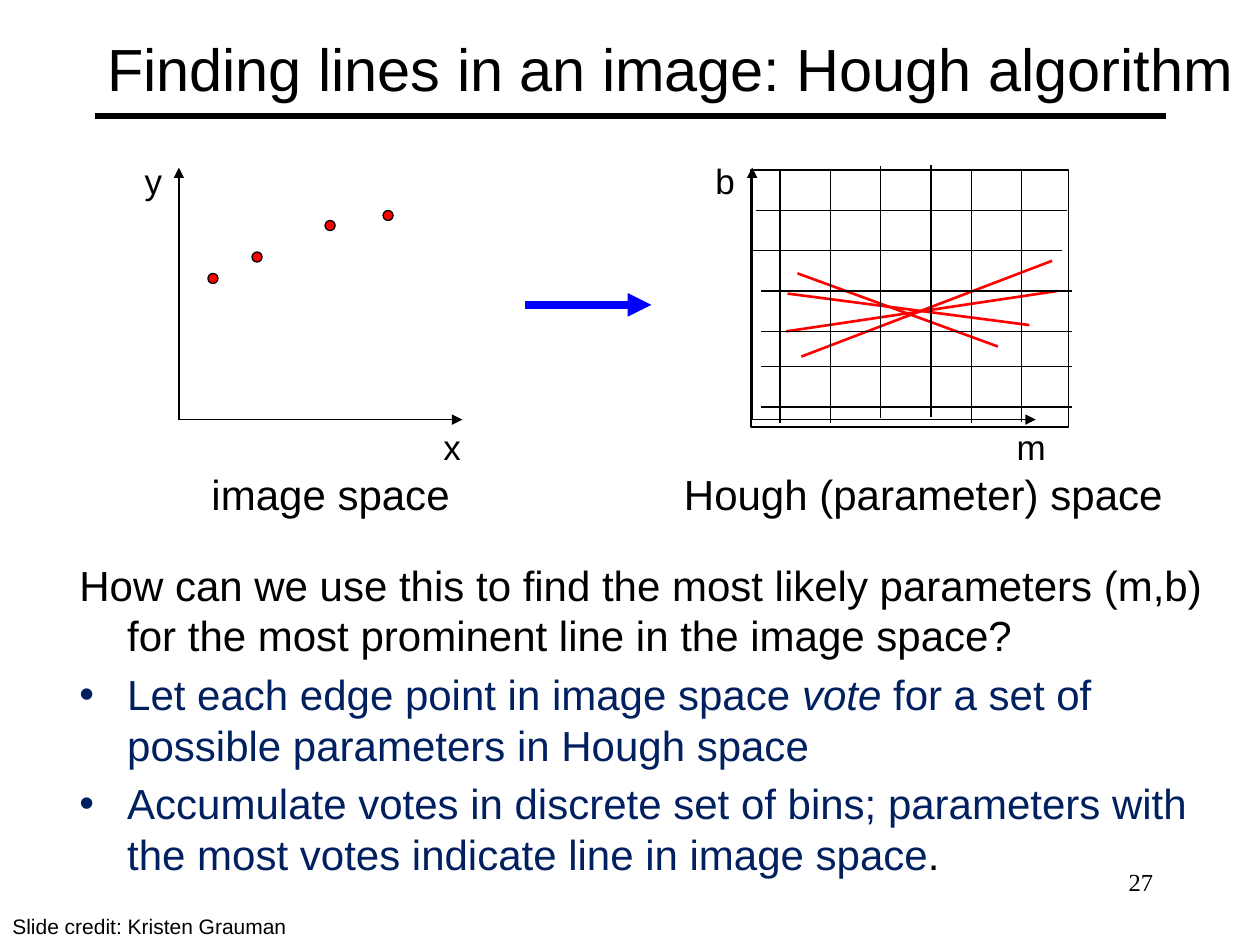
from lxml import etree
from pptx import Presentation
from pptx.dml.color import RGBColor
from pptx.enum.shapes import MSO_CONNECTOR, MSO_SHAPE
from pptx.enum.text import MSO_ANCHOR, MSO_AUTO_SIZE, PP_ALIGN
from pptx.oxml.ns import qn
from pptx.util import Inches, Pt

BLACK = RGBColor(0x00, 0x00, 0x00)
RED = RGBColor(0xFF, 0x00, 0x00)
BLUE = RGBColor(0x00, 0x00, 0xFF)
NAVY = RGBColor(0x00, 0x20, 0x60)
STRAIGHT = MSO_CONNECTOR.STRAIGHT
OVAL, RECTANGLE = MSO_SHAPE.OVAL, MSO_SHAPE.RECTANGLE
LEFT, RIGHT = PP_ALIGN.LEFT, PP_ALIGN.RIGHT

prs = Presentation()
prs.slide_width, prs.slide_height = Inches(10), Inches(7.5)
slide = prs.slides.add_slide(prs.slide_layouts[1])
shapes = slide.shapes


def add_line(x1, y1, x2, y2, color=BLACK, width=0.75, arrow=False):
    line = shapes.add_connector(STRAIGHT, Inches(x1), Inches(y1), Inches(x2), Inches(y2))
    line.line.color.rgb = color
    line.line.width = Pt(width)
    if arrow:
        etree.SubElement(line.line._get_or_add_ln(), qn("a:tailEnd"), type="triangle")
    etree.SubElement(line._element.spPr, qn("a:effectLst"))


def add_label(text, x, y, width, height, size, wrap=False, font="Arial", align=LEFT):
    label = shapes.add_textbox(Inches(x), Inches(y), Inches(width), Inches(height))
    label.text_frame.word_wrap = wrap
    label.text_frame.text = text
    paragraph = label.text_frame.paragraphs[0]
    paragraph.alignment = align
    run_font = paragraph.runs[0].font
    run_font.name, run_font.size, run_font.color.rgb = font, Pt(size), BLACK


add_line(0.75, 0.92, 9.25, 0.92, width=3)

title = shapes.title
title.left, title.top, title.width, title.height = Inches(0.75), Inches(0.08), Inches(9.25), Inches(0.92)
title.text_frame.text = "Finding lines in an image: Hough algorithm"
title.text_frame.auto_size = MSO_AUTO_SIZE.NONE
title.text_frame.vertical_anchor = MSO_ANCHOR.MIDDLE
title.text_frame.paragraphs[0].alignment = LEFT
title_font = title.text_frame.paragraphs[0].runs[0].font
title_font.name, title_font.size, title_font.color.rgb = "Arial", Pt(34), BLACK

body = slide.placeholders[1]
body.left, body.top, body.width, body.height = Inches(0.53), Inches(4.39), Inches(9.14), Inches(2.08)
body.text_frame.auto_size = MSO_AUTO_SIZE.NONE
body_text = [
    (False, [("How can we use this to find the most likely parameters (m,b) "
              "for the most prominent line in the image space?", BLACK, False)]),
    (True, [("Let each edge point in image space ", NAVY, False),
            ("vote ", NAVY, True),
            ("for a set of possible parameters in Hough space", NAVY, False)]),
    (True, [("Accumulate votes in discrete set of bins; parameters with "
             "the most votes indicate line in image space", NAVY, False),
            (".", BLACK, False)]),
]
for index, (bulleted, pieces) in enumerate(body_text):
    paragraph = body.text_frame.paragraphs[0] if index == 0 else body.text_frame.add_paragraph()
    paragraph.space_before = Pt(4.8)
    properties = paragraph._p.get_or_add_pPr()
    properties.set("marL", str(Inches(0.38)))
    properties.set("indent", str(Inches(-0.38)))
    if bulleted:
        etree.SubElement(properties, qn("a:buChar"), char="•")
    else:
        etree.SubElement(properties, qn("a:buNone"))
    for text, color, italic in pieces:
        run = paragraph.add_run()
        run.text = text
        run.font.name, run.font.size = "Arial", Pt(24)
        run.font.color.rgb, run.font.italic = color, italic

for origin_x in (1.42, 5.97):
    add_line(origin_x, 3.33, origin_x, 1.33, width=1, arrow=True)
    add_line(origin_x, 3.33, origin_x + 2.25, 3.33, width=1, arrow=True)

for text, x, y, width in [("x", 3.42, 3.33, 0.34), ("y", 1.05, 1.22, 0.34),
                          ("m", 7.97, 3.33, 0.43), ("b", 5.58, 1.22, 0.36)]:
    add_label(text, x, y, width, 0.43, 20)
add_label("image space", 1.58, 3.67, 2.09, 0.5, 24)
add_label("Hough (parameter) space", 5.33, 3.67, 4.04, 0.5, 24)

for x, y in [(1.65, 2.17), (2, 2), (2.58, 1.75), (3.04, 1.67)]:
    edge_point = shapes.add_shape(OVAL, Inches(x), Inches(y), Inches(0.08), Inches(0.08))
    edge_point.shadow.inherit = False
    edge_point.fill.solid()
    edge_point.fill.fore_color.rgb = RED
    edge_point.line.color.rgb = BLACK
    edge_point.line.width = Pt(0.75)

add_line(4.17, 2.42, 5.17, 2.42, BLUE, 4.5, arrow=True)

for ends in [(6.33, 2.17, 7.92, 2.75), (6.25, 2.33, 8.17, 2.58),
             (6.36, 2.83, 8.35, 2.07), (6.24, 2.63, 8.39, 2.31)]:
    add_line(*ends, RED, 1.5)

bins_frame = shapes.add_shape(RECTANGLE, Inches(5.96), Inches(1.35), Inches(2.52), Inches(2.04))
bins_frame.shadow.inherit = False
bins_frame.fill.background()
bins_frame.line.color.rgb = BLACK
bins_frame.line.width = Pt(0.75)
for x, y in [(6, 1.67), (5.96, 1.99), (6.04, 2.31), (6.04, 2.63), (6.04, 2.91), (6.04, 3.23)]:
    add_line(x, y, x + 2.47, y)
for x, y in [(6.19, 1.36), (6.59, 1.36), (6.99, 1.32), (7.39, 1.31), (7.71, 1.36), (8.11, 1.35)]:
    add_line(x, y, x, y + 2)

add_label("27", 7.17, 6.83, 2.08, 0.5, 14, True, "Times New Roman", RIGHT)
add_label("Slide credit: Kristen Grauman", 0, 7.2, 6.5, 0.3, 12, True)

prs.save("out.pptx")
